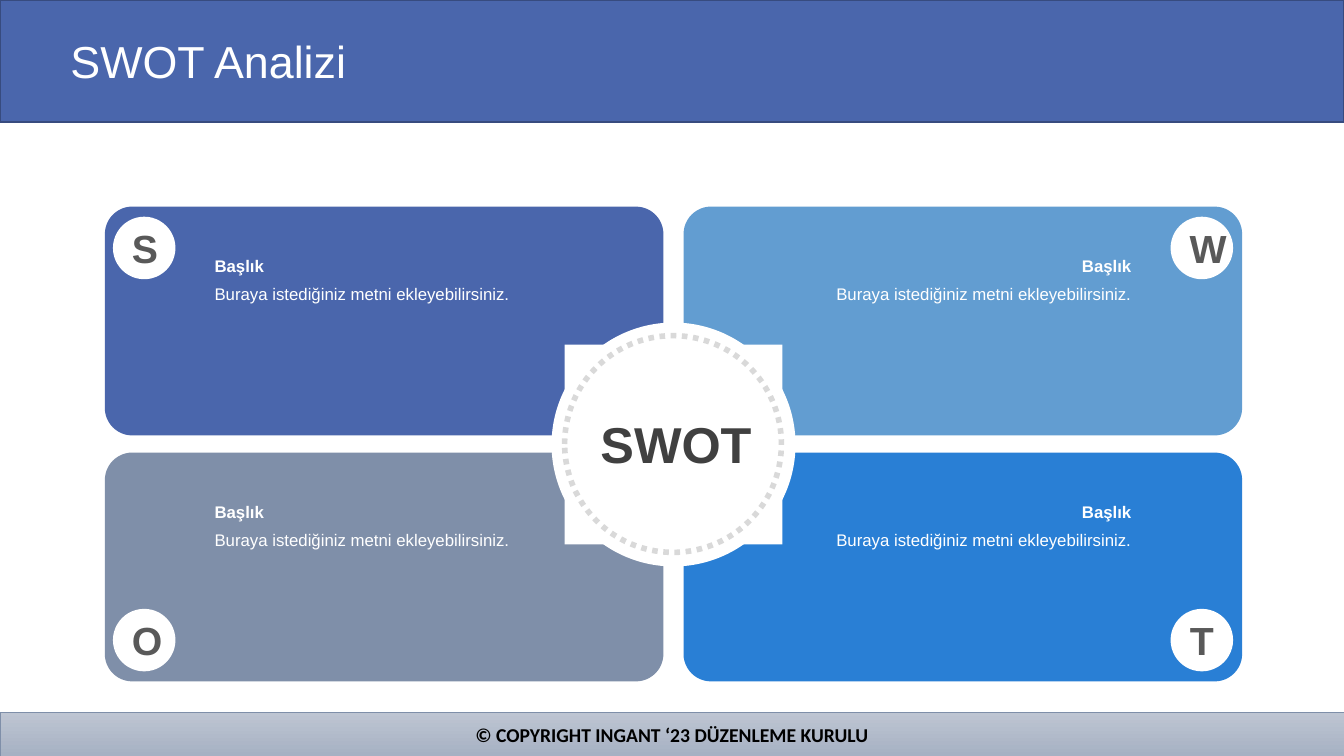
from pptx import Presentation
from pptx.dml.color import RGBColor
from pptx.enum.dml import MSO_LINE
from pptx.enum.shapes import MSO_SHAPE
from pptx.enum.text import MSO_ANCHOR, MSO_AUTO_SIZE, PP_ALIGN
from pptx.util import Inches, Pt

WHITE = RGBColor(0xFF, 0xFF, 0xFF)
BLACK = RGBColor(0x00, 0x00, 0x00)
INDIGO = RGBColor(0x4A, 0x66, 0xAC)
INDIGO_DARK = RGBColor(0x37, 0x4B, 0x7F)
SKY = RGBColor(0x62, 0x9D, 0xD1)
SLATE = RGBColor(0x7F, 0x8F, 0xA9)
BLUE = RGBColor(0x29, 0x7F, 0xD5)
FOOTER_TOP = RGBColor(0xBE, 0xC5, 0xD2)
FOOTER_BOTTOM = RGBColor(0xA6, 0xB1, 0xC3)
RING = RGBColor(0xD9, 0xD9, 0xD9)
LETTER = RGBColor(0x59, 0x59, 0x59)
CENTRE_TEXT = RGBColor(0x40, 0x40, 0x40)


class SwotSlide:
    font = "Arial"

    def __init__(self, prs):
        self.s = prs.slides.add_slide(prs.slide_layouts[6])

    def group(self):
        return self.s.shapes.add_group_shape()

    def shape(self, kind, box, fill=None, line=None, width=1, parent=None):
        sp = (parent or self.s).shapes.add_shape(kind, *map(Inches, box))
        sp.shadow.inherit = False
        if fill is None:
            sp.fill.background()
        else:
            sp.fill.solid()
            sp.fill.fore_color.rgb = fill
        if line is None:
            sp.line.fill.background()
        else:
            sp.line.color.rgb = line
            sp.line.width = Pt(width)
        return sp

    def label(self, sp, text, size, color, bold=False, align=PP_ALIGN.LEFT,
              anchor=MSO_ANCHOR.MIDDLE, font=None):
        """Put one styled paragraph in a shape and return it."""
        tf = sp.text_frame
        tf.word_wrap = True
        tf.vertical_anchor = anchor
        tf.text = text
        p = tf.paragraphs[0]
        p.alignment = align
        r = p.runs[0]
        r.font.name = font or self.font
        r.font.size = Pt(size)
        r.font.bold = bold
        r.font.color.rgb = color
        return p

    def text(self, box, text, size, color, parent=None, **style):
        """Add a text box that grows with its text."""
        sp = (parent or self.s).shapes.add_textbox(*map(Inches, box))
        sp.text_frame.auto_size = MSO_AUTO_SIZE.SHAPE_TO_FIT_TEXT
        self.label(sp, text, size, color, anchor=MSO_ANCHOR.TOP, **style)

    def header(self, title):
        self.shape(MSO_SHAPE.RECTANGLE, (0, 0, 13.33, 1.21), INDIGO, INDIGO_DARK)
        sp = self.s.shapes.add_textbox(*map(Inches, (0.6, 0.24, 12.41, 0.79)))
        self.label(sp, title, 32, WHITE).line_spacing = 0.9

    def footer(self, text):
        sp = self.shape(MSO_SHAPE.RECTANGLE, (0, 7.07, 13.33, 0.43),
                        FOOTER_TOP, SLATE, 0.5)
        sp.fill.gradient()
        sp.fill.gradient_angle = 270
        for stop, color in zip(sp.fill.gradient_stops, (FOOTER_TOP, FOOTER_BOTTOM)):
            stop.color.rgb = color
        self.label(sp, text, 14, BLACK, bold=True, align=PP_ALIGN.CENTER,
                   font="Calibri")

    def panel(self, col, row, color):
        sp = self.shape(MSO_SHAPE.ROUNDED_RECTANGLE,
                        (1.04 + 5.74 * col, 2.05 + 2.44 * row, 5.54, 2.27), color)
        sp.adjustments[0] = 0.12

    def hub(self, text):
        g = self.group()
        self.shape(MSO_SHAPE.RECTANGLE, (5.6, 3.42, 2.16, 1.98), WHITE, parent=g)
        self.shape(MSO_SHAPE.OVAL, (5.47, 3.2, 2.42, 2.42), WHITE, parent=g)
        ring = self.shape(MSO_SHAPE.OVAL, (5.6, 3.33, 2.15, 2.15),
                          line=RING, width=4, parent=g)
        ring.line.dash_style = MSO_LINE.ROUND_DOT
        self.text((5.76, 4.05, 1.89, 0.71), text, 36, CENTRE_TEXT,
                  bold=True, align=PP_ALIGN.CENTER)

    def badge(self, col, row, letter):
        sp = self.shape(MSO_SHAPE.OVAL,
                        (1.12 + 10.49 * col, 2.15 + 3.89 * row, 0.62, 0.62), WHITE)
        self.label(sp, letter, 28, LETTER, bold=True, align=PP_ALIGN.CENTER)

    def caption(self, col, row, heading, body):
        g = self.group()
        left, top = 2.03 + 6.06 * col, 2.49 + 2.44 * row
        align = PP_ALIGN.RIGHT if col else PP_ALIGN.LEFT
        self.text((left, top, 3.23, 0.3), heading, 12, WHITE, g,
                  bold=True, align=align)
        self.text((left, top + 0.28, 3.23, 0.3), body, 12, WHITE, g, align=align)


def main():
    prs = Presentation()
    prs.slide_width, prs.slide_height = Inches(13.33), Inches(7.5)
    slide = SwotSlide(prs)
    slide.header("SWOT Analizi")
    slide.footer("© COPYRIGHT INGANT ‘23 DÜZENLEME KURULU")

    quadrants = [(0, 0, "S", INDIGO), (1, 0, "W", SKY),
                 (0, 1, "O", SLATE), (1, 1, "T", BLUE)]
    for col, row, _, color in quadrants:
        slide.panel(col, row, color)
    slide.hub("SWOT")
    for col, row, letter, _ in quadrants:
        slide.badge(col, row, letter)
        slide.caption(col, row, "Başlık", "Buraya istediğiniz metni ekleyebilirsiniz.")

    prs.save("out.pptx")


if __name__ == "__main__":
    main()
